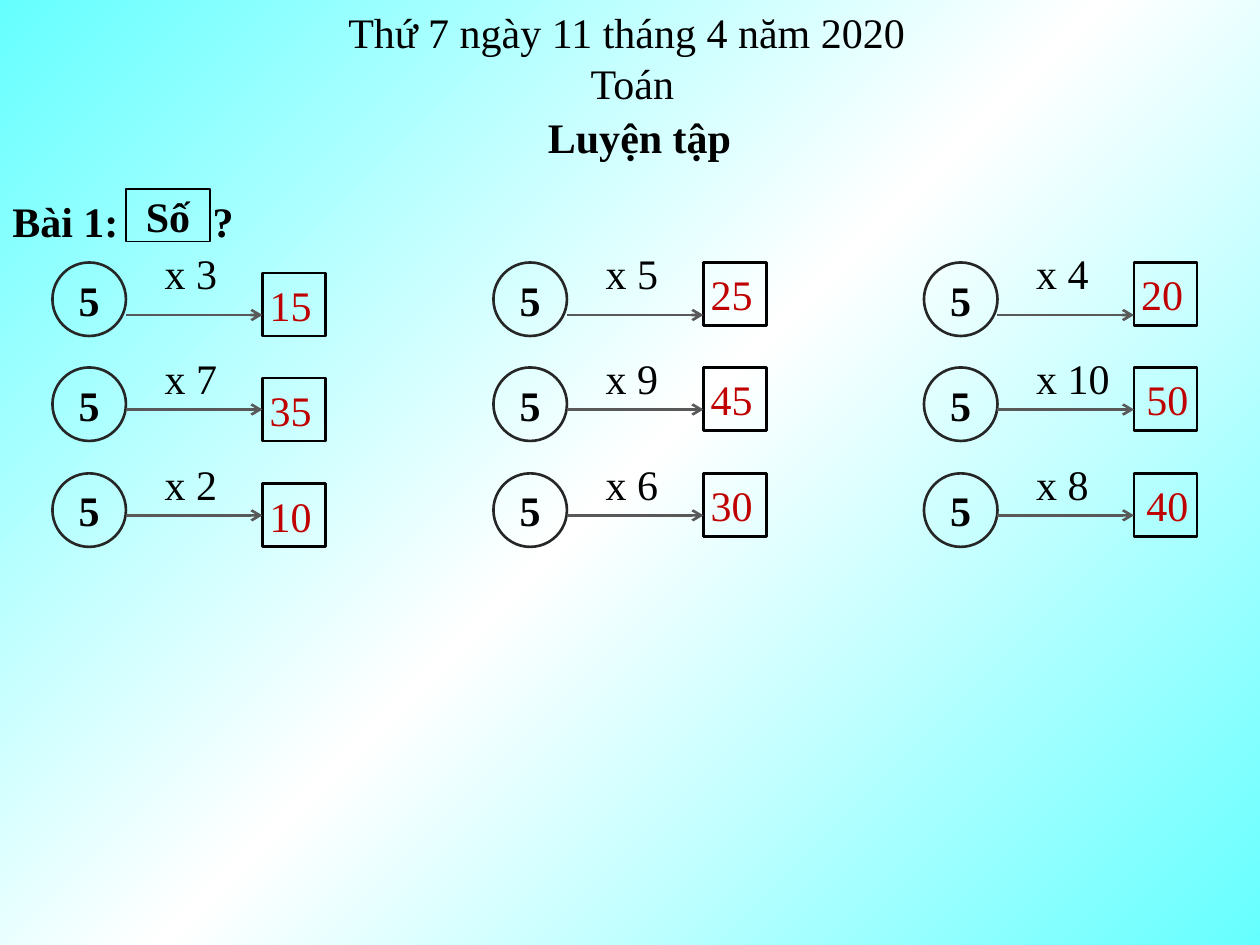
from copy import deepcopy
from dataclasses import dataclass

from lxml.etree import SubElement
from pptx import Presentation
from pptx.dml.color import RGBColor
from pptx.enum.shapes import MSO_CONNECTOR as Connector, MSO_SHAPE as Preset
from pptx.enum.text import MSO_ANCHOR as Anchor, MSO_AUTO_SIZE as AutoSize, PP_ALIGN as Align
from pptx.oxml.ns import qn
from pptx.util import Pt


@dataclass(frozen=True)
class Theme:
    font: str = "Times New Roman"
    size: int = 24
    ink: str = "000000"
    answer: str = "C00000"
    circle: str = "262626"
    arrow: str = "595959"
    edge: str = "66FFFF"
    middle: str = "FFFFFF"


theme = Theme()
deck = Presentation()
deck.slide_width, deck.slide_height = Pt(720), Pt(540)
page = deck.slides.add_slide(deck.slide_layouts[6])


def write(text, left=0, top=0, width=0, height=36, box=None, color=theme.ink, bold=False, wrap=False):
    if box is None:
        box = page.shapes.add_textbox(Pt(left), Pt(top), Pt(width), Pt(height))
        box.text_frame.auto_size = AutoSize.SHAPE_TO_FIT_TEXT
        box.text_frame.word_wrap = wrap
    else:
        box.text_frame.vertical_anchor = Anchor.MIDDLE
        box.text_frame.paragraphs[0].alignment = Align.CENTER
    para = box.text_frame.paragraphs[0]
    span = para.add_run()
    span.text = text
    span.font.name = theme.font
    span.font.size = Pt(theme.size)
    span.font.bold = bold
    span.font.color.rgb = RGBColor.from_string(color)
    return para


def outline(preset, left, top, width, height, color=theme.ink, weight=1.5):
    shape = page.shapes.add_shape(preset, Pt(left), Pt(top), Pt(width), Pt(height))
    shape.shadow.inherit = False
    shape.fill.background()
    shape.line.color.rgb = RGBColor.from_string(color)
    shape.line.width = Pt(weight)
    return shape


backdrop = page.background.fill
backdrop.gradient()
backdrop.gradient_angle = 315
stops = page.element.find(".//" + qn("a:gsLst"))
stops.insert(1, deepcopy(stops[0]))
for stop, place, color in zip(
    backdrop.gradient_stops, (0, 0.5, 1), (theme.edge, theme.middle, theme.edge)
):
    stop.position = place
    stop.color.rgb = RGBColor.from_string(color)

write("Thứ 7 ngày 11 tháng 4 năm 2020", left=192, top=0, width=335.5)
write("Toán", left=330.5, top=29.5, width=62.6)
write("Luyện tập", left=306, top=60, width=120, bold=True)

heading = write("Bài 1:\t?", left=0, top=108, width=150, bold=True, wrap=True)
tabs = SubElement(heading._p.get_or_add_pPr(), qn("a:tabLst"))
SubElement(tabs, qn("a:tab"), pos=str(Pt(114.5)), algn="l")
write("Số", box=outline(Preset.RECTANGLE, 72, 108, 48, 30, weight=1), bold=True)

columns = (
    (30, 6, (3, 7, 2)),
    (282, 0, (5, 9, 6)),
    (528, 0, (4, 10, 8)),
)
rows = ((150, 30), (210, 24), (270.5, 24))

for left, drop, factors in columns:
    for (top, arrow_drop), factor in zip(rows, factors):
        circle = outline(Preset.OVAL, left, top, 42, 42, color=theme.circle)
        write("5", box=circle, bold=True)
        square = outline(Preset.RECTANGLE, left + 120, top + drop, 36, 36)

        level = top + arrow_drop
        arrow = page.shapes.add_connector(
            Connector.STRAIGHT, Pt(left + 42), Pt(level), Pt(left + 120), Pt(level)
        )
        arrow.line.color.rgb = RGBColor.from_string(theme.arrow)
        arrow.line.width = Pt(1.5)
        SubElement(arrow.line._get_or_add_ln(), qn("a:tailEnd"), type="arrow")
        SubElement(arrow._element.spPr, qn("a:effectLst"))
        if arrow_drop == drop + 18:
            arrow.end_connect(square, 1)

        write(f"x {factor}", left=left + 57, top=top - 12, width=57 if factor > 9 else 44.6)
        shift = 120 if factor in (8, 10) else 117
        write(str(5 * factor), left=left + shift, top=top + drop, width=39, color=theme.answer)

deck.save("out.pptx")
